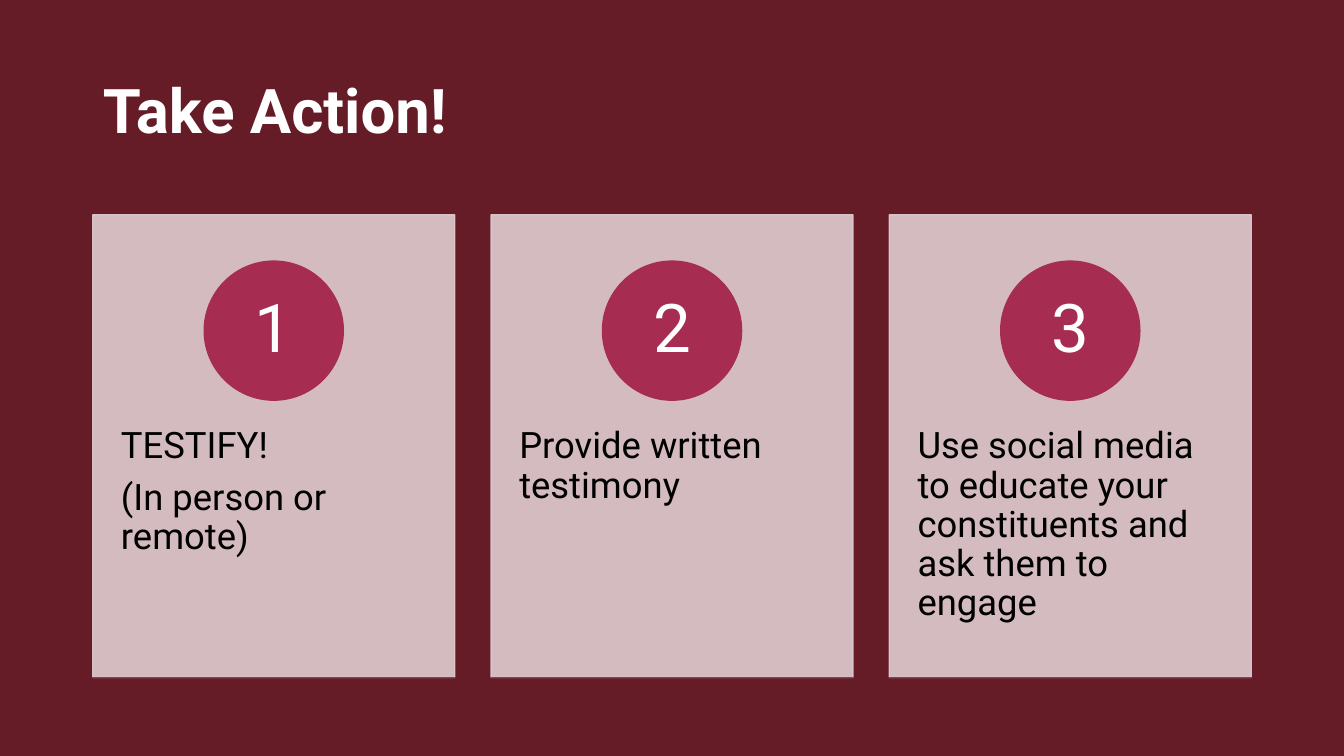
import dataclasses

import lxml.etree
import pptx
import pptx.dml.color
import pptx.enum.shapes
import pptx.enum.text
import pptx.oxml.ns
import pptx.util

Inches = pptx.util.Inches
Pt = pptx.util.Pt
Shape = pptx.enum.shapes.MSO_SHAPE
Anchor = pptx.enum.text.MSO_ANCHOR
Align = pptx.enum.text.PP_ALIGN


@dataclasses.dataclass(frozen=True)
class Theme:
    font: str = "Roboto"
    backdrop: str = "651C27"
    panel: str = "E1CDD1"
    accent: str = "A62C52"
    light: str = "FFFFFF"
    dark: str = "000000"
    title_size: int = 44
    number_size: int = 48
    body_size: int = 26
    panel_opacity: int = 90


def color(value):
    return pptx.dml.color.RGBColor.from_string(value)


def apply(target, values):
    for name, value in values.items():
        setattr(target, name, value)


class SlideBuilder:
    def __init__(self, deck, theme):
        self.theme = theme
        self.page = deck.slides.add_slide(deck.slide_layouts[5])
        fill = self.page.background.fill
        fill.solid()
        fill.fore_color.rgb = color(theme.backdrop)

    def set_text(self, box, lines, size, ink, insets, bold=False,
                 anchor=Anchor.TOP, align=Align.LEFT):
        """Fill a text box with paragraphs; insets are (sides, top and bottom)."""
        frame = box.text_frame
        sides, ends = map(Inches, insets)
        apply(frame, {"word_wrap": True, "vertical_anchor": anchor,
                      "auto_size": pptx.enum.text.MSO_AUTO_SIZE.NONE,
                      "margin_left": sides, "margin_right": sides,
                      "margin_top": ends, "margin_bottom": ends})
        frame.text = "\n".join(lines)
        for para in frame.paragraphs:
            apply(para, {"alignment": align, "line_spacing": 0.9,
                         "space_before": Pt(0), "space_after": Pt(round(size * 0.35))})
            for span in para.runs:
                apply(span.font, {"name": self.theme.font, "size": Pt(size), "bold": bold})
                span.font.color.rgb = color(ink)

    def title(self, text, place):
        box = self.page.shapes.title
        apply(box, dict(zip(("left", "top", "width", "height"), map(Inches, place))))
        self.set_text(box, [text], self.theme.title_size, self.theme.light, (0.1, 0.05),
                      bold=True, anchor=Anchor.MIDDLE)

    def text(self, place, lines, size, ink, insets, **layout):
        box = self.page.shapes.add_textbox(*map(Inches, place))
        self.set_text(box, lines, size, ink, insets, **layout)

    def shape(self, kind, place, tint, opacity=100):
        shape = self.page.shapes.add_shape(kind, *map(Inches, place))
        shape.shadow.inherit = False
        shape.fill.solid()
        shape.fill.fore_color.rgb = color(tint)
        shape.line.color.rgb = color(tint)
        shape.line.width = Pt(1)
        if opacity < 100:
            qn = pptx.oxml.ns.qn
            for node in shape.element.spPr.iter(qn("a:srgbClr")):
                alpha = lxml.etree.SubElement(node, qn("a:alpha"))
                alpha.set("val", str(opacity * 1000))

    def card(self, left, number, lines):
        theme, top, width, height = self.theme, 2.13, 3.59, 4.59
        circle, label = 1.38, 0.97
        circle_top = 2.59
        center = left + width / 2
        self.shape(Shape.RECTANGLE, (left, top, width, height),
                   theme.panel, theme.panel_opacity)
        self.text((left, 3.88, width, 2.75), lines, theme.body_size, theme.dark, (0.28, 0.36))
        self.shape(Shape.OVAL, (center - circle / 2, circle_top, circle, circle), theme.accent)
        self.text((center - label / 2, circle_top + (circle - label) / 2, label, label),
                  [str(number)], theme.number_size, theme.light, (0.11, 0.01),
                  anchor=Anchor.MIDDLE, align=Align.CENTER)
        self.shape(Shape.RECTANGLE, (left, top + height, width, 0), theme.accent)


def main():
    deck = pptx.Presentation()
    apply(deck, {"slide_width": Inches(13.33), "slide_height": Inches(7.5)})
    builder = SlideBuilder(deck, Theme())
    builder.title("Take Action!", (0.92, 0.4, 11.5, 1.45))
    actions = [
        ["TESTIFY!", "(In person or remote)"],
        ["Provide written testimony"],
        ["Use social media to educate your constituents and ask them to engage"],
    ]
    for index, lines in enumerate(actions):
        builder.card(0.92 + 3.95 * index, index + 1, lines)
    deck.save("out.pptx")


if __name__ == "__main__":
    main()
